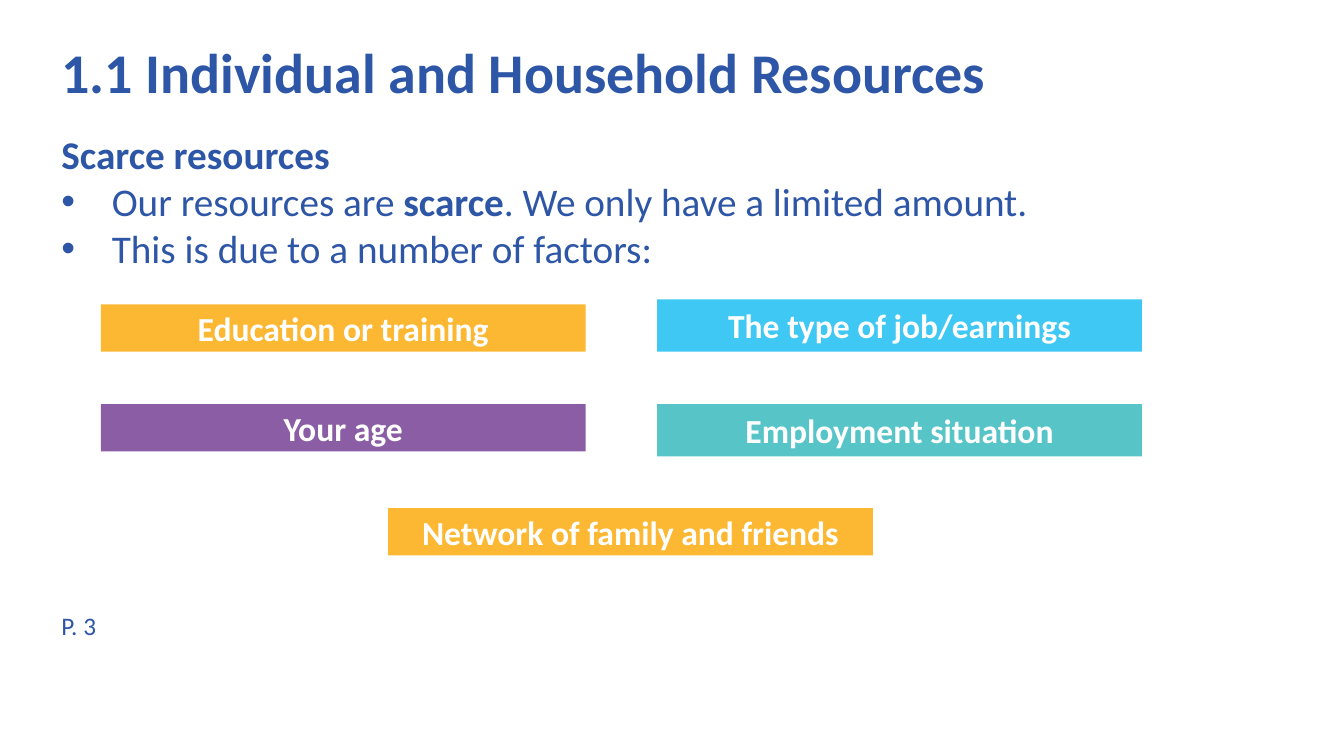
from lxml import etree
from pptx import Presentation
from pptx.dml.color import RGBColor
from pptx.enum import shapes, text
from pptx.oxml import ns
from pptx.util import Pt

COLORS = {
    "ink": "2E56A6",
    "white": "FFFFFF",
    "amber": "FDB833",
    "purple": "8A5DA4",
    "teal": "57C5C7",
    "sky": "40C8F4",
}
INSET = Pt(3.6)
LEFT = 40.3
FACTOR_WIDTH = 346.3
# label, left, top, height, colour
FACTORS = [
    ("Education or training", 72, 217.4, 33.8, "amber"),
    ("Your age", 72, 288.7, 33.8, "purple"),
    ("Employment situation", 469.4, 288.7, 37.4, "teal"),
    ("The type of job/earnings", 469.4, 213.8, 37.4, "sky"),
    ("Network of family and friends", 277.2, 362.9, 33.8, "amber"),
]


def rgb(name):
    return RGBColor.from_string(COLORS[name])


def set_frame(frame, anchor=text.MSO_ANCHOR.TOP):
    frame.word_wrap = True
    frame.auto_size = text.MSO_AUTO_SIZE.NONE
    frame.vertical_anchor = anchor
    frame.margin_left = frame.margin_right = INSET
    frame.margin_top = frame.margin_bottom = INSET


def style_runs(paragraph, size, color="ink", bold=False):
    for run in paragraph.runs:
        run.font.name = "Calibri"
        run.font.size = Pt(size)
        run.font.bold = bold
        run.font.color.rgb = rgb(color)


def place(shape, left, top, width, height):
    shape.left, shape.top = Pt(left), Pt(top)
    shape.width, shape.height = Pt(width), Pt(height)


def add_title(slide, wording):
    title = slide.shapes.title
    place(title, LEFT, 28.8, 820.8, 47.5)
    title.text_frame.text = wording
    set_frame(title.text_frame)
    heading = title.text_frame.paragraphs[0]
    heading.alignment = text.PP_ALIGN.LEFT
    heading.line_spacing = 0.9
    style_runs(heading, 40, bold=True)


def add_text(slide, left, top, width, height):
    frame = slide.shapes.add_textbox(Pt(left), Pt(top), Pt(width), Pt(height)).text_frame
    set_frame(frame)
    return frame


def add_bullet(frame, *parts):
    """Append a bullet; every second part is bold."""
    bullet = frame.add_paragraph()
    properties = bullet._p.get_or_add_pPr()
    properties.set("marL", str(Pt(36)))
    properties.set("indent", str(Pt(-36)))
    etree.SubElement(properties, ns.qn("a:buFont")).set("typeface", "Arial")
    etree.SubElement(properties, ns.qn("a:buChar")).set("char", "•")
    for part in parts:
        bullet.add_run().text = part
    style_runs(bullet, 28)
    for keyword in bullet.runs[1::2]:
        keyword.font.bold = True


def add_factor(slide, label, left, top, height, color):
    factor = slide.shapes.add_shape(
        shapes.MSO_SHAPE.RECTANGLE, Pt(left), Pt(top), Pt(FACTOR_WIDTH), Pt(height))
    factor.shadow.inherit = False
    factor.fill.solid()
    factor.fill.fore_color.rgb = rgb(color)
    factor.line.fill.background()
    factor.text_frame.text = label
    set_frame(factor.text_frame, text.MSO_ANCHOR.MIDDLE)
    caption = factor.text_frame.paragraphs[0]
    caption.alignment = text.PP_ALIGN.CENTER
    style_runs(caption, 24, "white", bold=True)


def main():
    deck = Presentation()
    deck.slide_width, deck.slide_height = Pt(960), Pt(540)
    slide = deck.slides.add_slide(deck.slide_layouts[5])

    add_title(slide, "1.1 Individual and Household Resources")

    scarcity = add_text(slide, LEFT, 89.3, 787, 103)
    scarcity.text = "Scarce resources"
    style_runs(scarcity.paragraphs[0], 28, bold=True)
    add_bullet(scarcity, "Our resources are ", "scarce", ". We only have a limited amount.")
    add_bullet(scarcity, "This is due to a number of factors:")

    for factor in FACTORS:
        add_factor(slide, *factor)

    page_reference = add_text(slide, LEFT, 432.7, 473, 28.8)
    page_reference.text = "P. 3"
    style_runs(page_reference.paragraphs[0], 18)

    deck.save("out.pptx")


if __name__ == "__main__":
    main()
